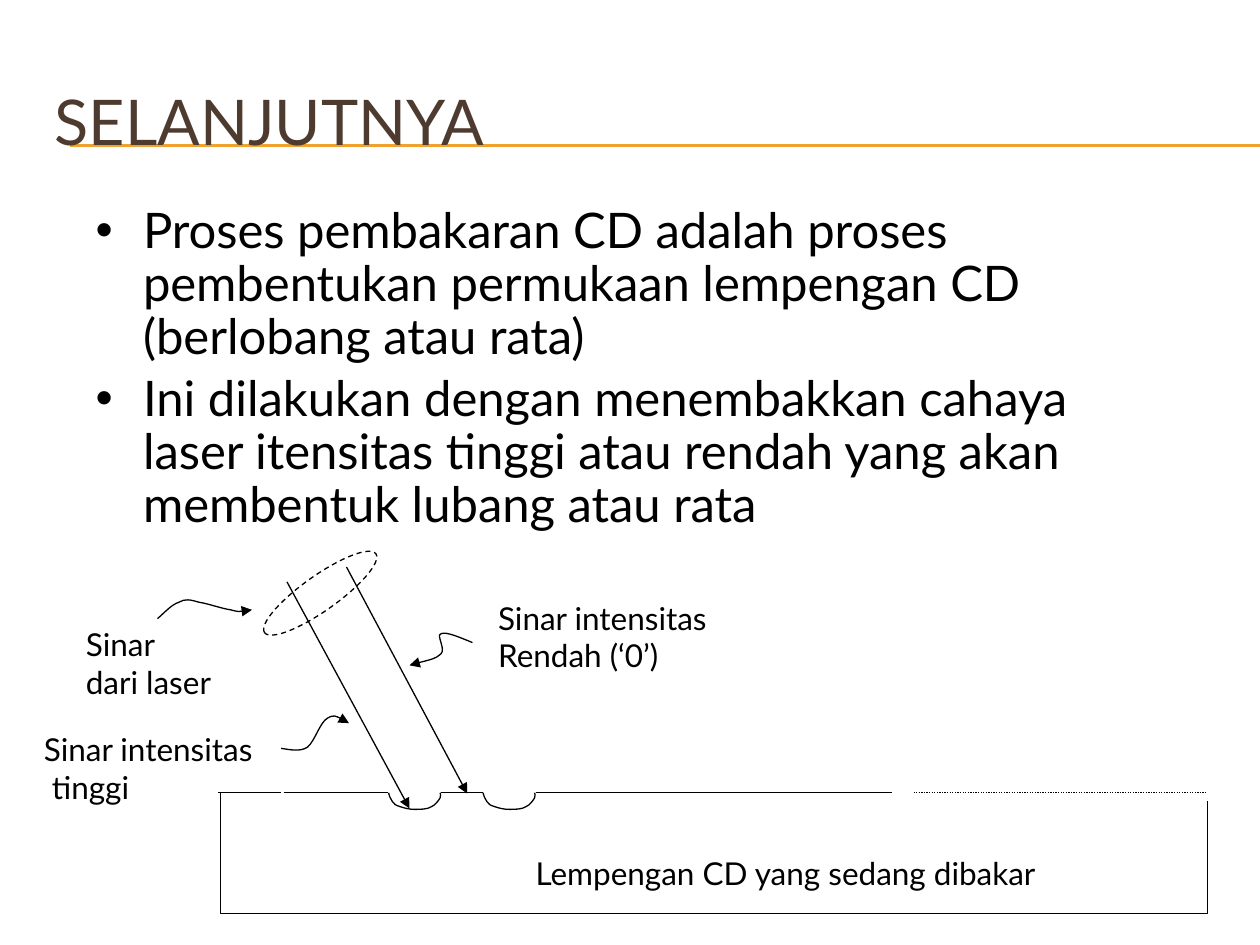
from lxml.etree import SubElement
from pptx import Presentation
from pptx.dml.color import RGBColor
from pptx.enum.dml import MSO_LINE
from pptx.enum.shapes import MSO_CONNECTOR, MSO_SHAPE
from pptx.enum.text import MSO_ANCHOR, MSO_AUTO_SIZE, PP_ALIGN
from pptx.oxml.ns import qn
from pptx.util import Pt


def style_line(sp, color="000000", dash=None, arrow=False):
    sp.line.color.rgb = RGBColor.from_string(color)
    sp.line.width = Pt(0.75)
    if dash:
        sp.line.dash_style = dash
    if arrow:
        SubElement(sp.line._get_or_add_ln(), qn("a:tailEnd"), type="triangle")
    if sp._element.spPr.find(qn("a:effectLst")) is None:
        SubElement(sp._element.spPr, qn("a:effectLst"))


def add_path(shapes, points, curved=False, arrow=False):
    """Draw an open outline; if curved, each three points after the first make a Bézier."""
    pts = [(Pt(x), Pt(y)) for x, y in points]
    builder = shapes.build_freeform(*pts[0])
    builder.add_line_segments(pts[1:], close=False)
    sp = builder.convert_to_shape()
    sp.fill.background()
    if curved:
        path = sp._element.find(".//" + qn("a:path"))
        segments = path.findall(qn("a:lnTo"))
        for i in range(0, len(segments), 3):
            bezier = SubElement(path, qn("a:cubicBezTo"))
            for segment in segments[i:i + 3]:
                bezier.append(segment[0])
                path.remove(segment)
    style_line(sp, arrow=arrow)


prs = Presentation()
prs.slide_width, prs.slide_height = Pt(720), Pt(540)
s = prs.slides.add_slide(prs.slide_layouts[1])
shapes = s.shapes

# Rule under the title, behind the text
for y in (82.8, 83.5):
    rule = shapes.add_connector(MSO_CONNECTOR.STRAIGHT, Pt(40), Pt(y), Pt(720), Pt(y))
    style_line(rule, "F0A22E")
    shapes._spTree.insert(2, rule._element)

# Title and list
title, body = shapes.title, s.placeholders[1]
title.text_frame.text = "SELANJUTNYA"
body.text_frame.text = (
    "Proses pembakaran CD adalah proses pembentukan permukaan lempengan CD (berlobang atau rata)\n"
    "Ini dilakukan dengan menembakkan cahaya laser itensitas tinggi atau rendah yang akan "
    "membentuk lubang atau rata")
for sp, box, size, color, anchor, spacing in (
        (title, (24, 36, 684, 66), 36, "4E3B30", MSO_ANCHOR.MIDDLE, 1.0),
        (body, (47.5, 114, 630, 208), 28, "000000", MSO_ANCHOR.TOP, 0.9)):
    sp.left, sp.top, sp.width, sp.height = [Pt(v) for v in box]
    tf = sp.text_frame
    tf.auto_size = MSO_AUTO_SIZE.NONE
    tf.vertical_anchor = anchor
    for p in tf.paragraphs:
        p.alignment = PP_ALIGN.LEFT
        p.line_spacing = spacing
        for r in p.runs:
            r.font.name, r.font.size = "Lato", Pt(size)
            r.font.color.rgb = RGBColor.from_string(color)

# Disc with two pits in its surface
surface = 453
add_path(shapes, [(126, surface), (126, 522), (690, 522), (690, 458)])
pit = [(0, 0), (0.7, 1.4), (0.7, 3.6), (2.2, 5), (2.9, 6.5), (4.3, 7.2), (6.5, 7.9),
       (8.6, 8.6), (11.5, 9.5), (15, 9.5), (18, 9.5), (22.3, 9.5), (24.5, 8),
       (26.6, 7.2), (28.8, 4.3), (29.5, 2.9), (30.2, 1.4), (29.5, 0.7), (29.5, 0)]
for left in (222, 276):
    add_path(shapes, [(left + x, surface + y) for x, y in pit], curved=True)

# Surface pieces, then the two laser rays
dot = MSO_LINE.ROUND_DOT
for x1, y1, x2, y2, dash, arrow in (
        (124.5, surface, 160.5, surface, None, False),
        (162, surface, 198, surface, None, False),
        (192, surface, 222, surface, None, False),
        (252, surface, 276, surface, None, False),
        (306, surface, 336, surface, None, False),
        (336, surface, 366, surface, None, False),
        (366, surface, 510, surface, None, False),
        (522, surface, 690, surface, dot, False),
        (164, 332.5, 234, 462, None, True),
        (198, 324, 267, 453.5, None, True)):
    line = shapes.add_connector(MSO_CONNECTOR.STRAIGHT, Pt(x1), Pt(y1), Pt(x2), Pt(y2))
    style_line(line, dash=dash, arrow=arrow)

beam = shapes.add_shape(MSO_SHAPE.OVAL, Pt(144), Pt(329), Pt(78), Pt(20))
beam.rotation = 324.7
beam.fill.background()
style_line(beam, dash=MSO_LINE.DASH)

# Curved pointers from the labels
for pointer in (
        [(160.6, 427.7), (165.6, 428.4), (171.4, 429.8), (175.7, 427), (180, 423.4),
         (182.9, 412.6), (187.2, 410.4), (190.8, 408.2), (195.1, 410.4), (199.4, 413.3)],
        [(270, 367.2), (262.8, 364.3), (254.9, 360.7), (252, 362.2), (249.1, 362.9),
         (254.9, 370.8), (252, 373.7), (249.1, 376.6), (241.2, 378), (234, 380.2)],
        [(90, 353.5), (94.3, 349.9), (97.9, 345.6), (102.2, 344.2), (105.8, 342),
         (108.7, 342.7), (113.8, 344.2), (118.8, 344.9), (126.7, 347.8), (131.8, 348.5),
         (136.8, 349.9), (140.4, 349.2), (144, 348.5)]):
    add_path(shapes, pointer, curved=True, arrow=True)

# Labels
for text, left, top, width, height in (
        ("Sinar intensitas\n tinggi", 18, 413.5, 137.5, 50.5),
        ("Sinar intensitas\nRendah (‘0’)", 277.5, 338.5, 142.5, 50.5),
        ("Sinar\ndari laser", 42, 353.5, 88.5, 50.5),
        ("Lempengan CD yang sedang dibakar", 299, 484.5, 312.5, 29)):
    tf = shapes.add_textbox(Pt(left), Pt(top), Pt(width), Pt(height)).text_frame
    tf.word_wrap = True
    tf.text = text
    for p in tf.paragraphs:
        for r in p.runs:
            r.font.name, r.font.size = "Lato", Pt(18)
            r.font.color.rgb = RGBColor.from_string("000000")

prs.save("out.pptx")
